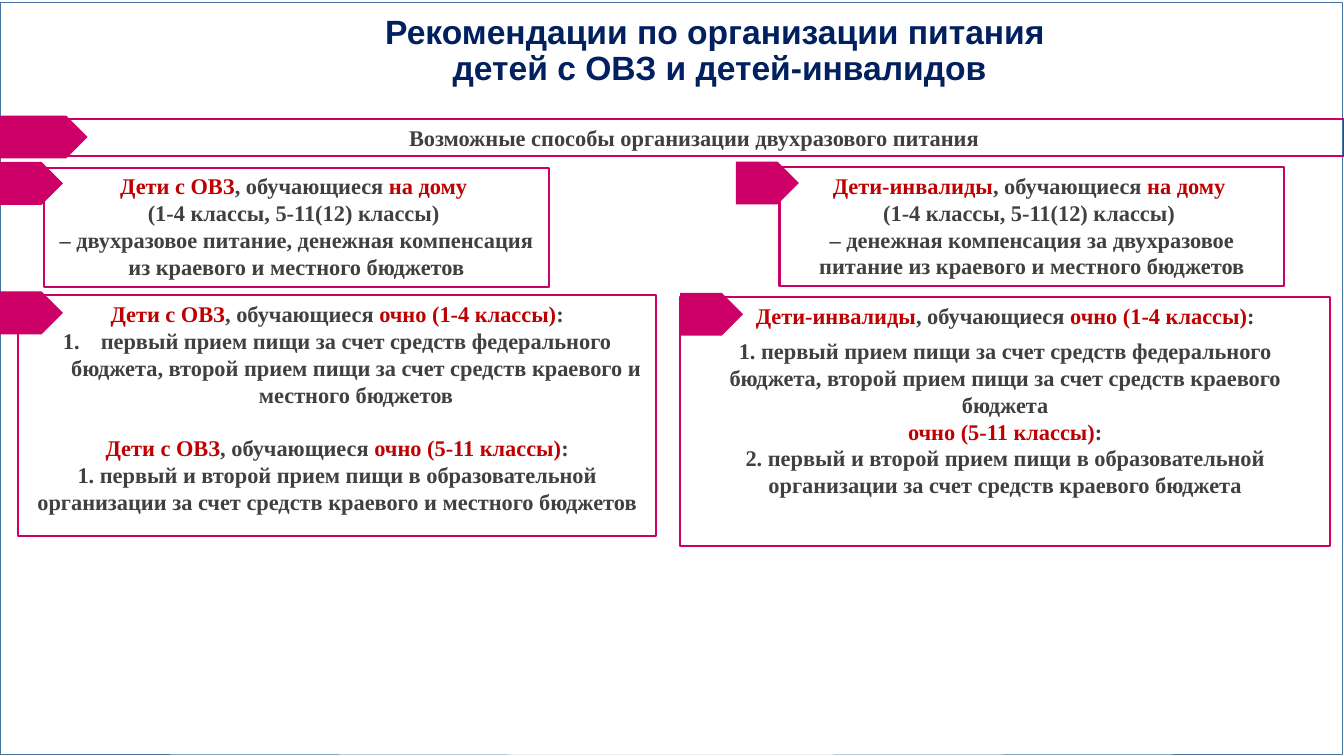
from dataclasses import dataclass

from lxml import etree
from pptx import Presentation
from pptx import util as u
from pptx.dml.color import RGBColor
from pptx.enum import shapes, text
from pptx.oxml import ns


@dataclass(frozen=True)
class Theme:
    title: RGBColor = RGBColor(0x00, 0x20, 0x60)
    body: RGBColor = RGBColor(0x40, 0x40, 0x40)
    accent: RGBColor = RGBColor(0xC0, 0x00, 0x00)
    magenta: RGBColor = RGBColor(0xCC, 0x00, 0x66)
    frame: RGBColor = RGBColor(0x43, 0x73, 0x9E)
    title_font: str = "Arial"
    body_font: str = "Times New Roman"
    title_size: int = 24
    body_size: int = 16


@dataclass(frozen=True)
class Line:
    words: str
    before: float = 0
    number: int = 0
    hanging: float = 0


class SlideBuilder:
    def __init__(self, slide, theme):
        self.slide = slide
        self.theme = theme

    def shape(self, kind, box, fill=None, line=None, width=1.5):
        shape = self.slide.shapes.add_shape(kind, *map(u.Pt, box))
        shape.shadow.inherit = False
        if fill is None:
            shape.fill.background()
        else:
            shape.fill.solid()
            shape.fill.fore_color.rgb = fill
        if line is None:
            shape.line.fill.background()
        else:
            shape.line.color.rgb = line
            shape.line.width = u.Pt(width)
        return shape

    def frame(self, box):
        self.shape(shapes.MSO_SHAPE.RECTANGLE, box, line=self.theme.frame, width=0.25)

    def title(self, words, box):
        title = self.slide.shapes.title
        title.left, title.top, title.width, title.height = map(u.Pt, box)
        body = title.text_frame
        body.text = words
        body.word_wrap = True
        body.auto_size = text.MSO_AUTO_SIZE.NONE
        body.vertical_anchor = text.MSO_ANCHOR.MIDDLE
        body.margin_left = body.margin_right = u.Pt(3)
        body.margin_top = body.margin_bottom = u.Pt(3)
        heading = body.paragraphs[0]
        heading.alignment = text.PP_ALIGN.CENTER
        heading.line_spacing = 0.9
        self.style(heading, self.theme.title_font, self.theme.title_size)
        heading.font.color.rgb = self.theme.title

    def style(self, paragraph, font, size):
        paragraph.font.name = font
        paragraph.font.size = u.Pt(size)
        paragraph.font.bold = True

    def number(self, paragraph, line):
        properties = paragraph._p.get_or_add_pPr()
        properties.set("marL", str(u.Pt(line.hanging)))
        properties.set("indent", str(-u.Pt(line.hanging)))
        etree.SubElement(properties, ns.qn("a:buAutoNum"),
                         type="arabicPeriod", startAt=str(line.number))

    def card(self, box, lines):
        card = self.shape(shapes.MSO_SHAPE.RECTANGLE, box, line=self.theme.magenta)
        body = card.text_frame
        body.word_wrap = True
        body.vertical_anchor = text.MSO_ANCHOR.TOP
        for index, line in enumerate(lines):
            paragraph = body.add_paragraph() if index else body.paragraphs[0]
            paragraph.alignment = text.PP_ALIGN.CENTER
            if line.before:
                paragraph.space_before = u.Pt(line.before)
            if line.number:
                self.number(paragraph, line)
            self.style(paragraph, self.theme.body_font, self.theme.body_size)
            paragraph.font.color.rgb = self.theme.body
            for part, words in enumerate(line.words.split("|")):
                if words:
                    run = paragraph.add_run()
                    run.text = words
                    if part % 2:
                        run.font.color.rgb = self.theme.accent

    def tag(self, left, top, width=45):
        self.shape(shapes.MSO_SHAPE.PENTAGON, (left, top, width, 30.6),
                   fill=self.theme.magenta)


HOME_LINES = "(1-4 классы, 5-11(12) классы) "
MEALS = "первый прием пищи за счет средств федерального бюджета, второй прием пищи за счет средств краевого "
BOTH_MEALS = "первый и второй прием пищи в образовательной организации за счет средств краевого "

METHODS = [Line("Возможные способы организации двухразового питания")]
OVZ_HOME = [
    Line("|Дети с ОВЗ|, обучающиеся |на дому |"),
    Line(HOME_LINES),
    Line("– двухразовое питание, денежная компенсация из краевого и местного бюджетов"),
]
OVZ_SCHOOL = [
    Line("|Дети с ОВЗ|, обучающиеся |очно (1-4 классы)|:"),
    Line(MEALS + "и местного бюджетов", number=1, hanging=27),
    Line("|Дети с ОВЗ|, обучающиеся |очно (5-11 классы)|:", before=19),
    Line("1. " + BOTH_MEALS + "и местного бюджетов"),
]
DISABLED_HOME = [
    Line("|Дети-инвалиды|, обучающиеся |на дому |"),
    Line(HOME_LINES),
    Line("– денежная компенсация за двухразовое питание из краевого и местного бюджетов"),
]
DISABLED_SCHOOL = [
    Line("|Дети-инвалиды|, обучающиеся |очно (1-4 классы)|:"),
    Line(" " + MEALS + "бюджета", before=6, number=1),
    Line("|очно (5-11 классы)|:"),
    Line(" " + BOTH_MEALS + "бюджета", number=2),
]


def main():
    deck = Presentation()
    deck.slide_width, deck.slide_height = u.Pt(960), u.Pt(540)
    builder = SlideBuilder(deck.slides.add_slide(deck.slide_layouts[5]), Theme())

    builder.frame((0, 1.5, 958.5, 537))
    builder.title("Рекомендации по организации питания \vдетей с ОВЗ и детей-инвалидов",
                  (90.7, 4.3, 846.7, 65.5))
    sections = [
        ((31.5, 85, 928.5, 26.5), METHODS, (0, 82.6, 62.6)),
        ((31.5, 119.7, 360.5, 85), OVZ_HOME, (0, 115.7)),
        ((12.8, 210.8, 456, 172), OVZ_SCHOOL, (0, 208.2)),
        ((556.8, 119.3, 360.5, 85), DISABLED_HOME, (525.6, 115.4)),
        ((485.8, 212, 464.4, 178), DISABLED_SCHOOL, (485.8, 209.2)),
    ]
    for box, lines, tag in sections:
        builder.card(box, lines)
        builder.tag(*tag)
    deck.save("out.pptx")


if __name__ == "__main__":
    main()
